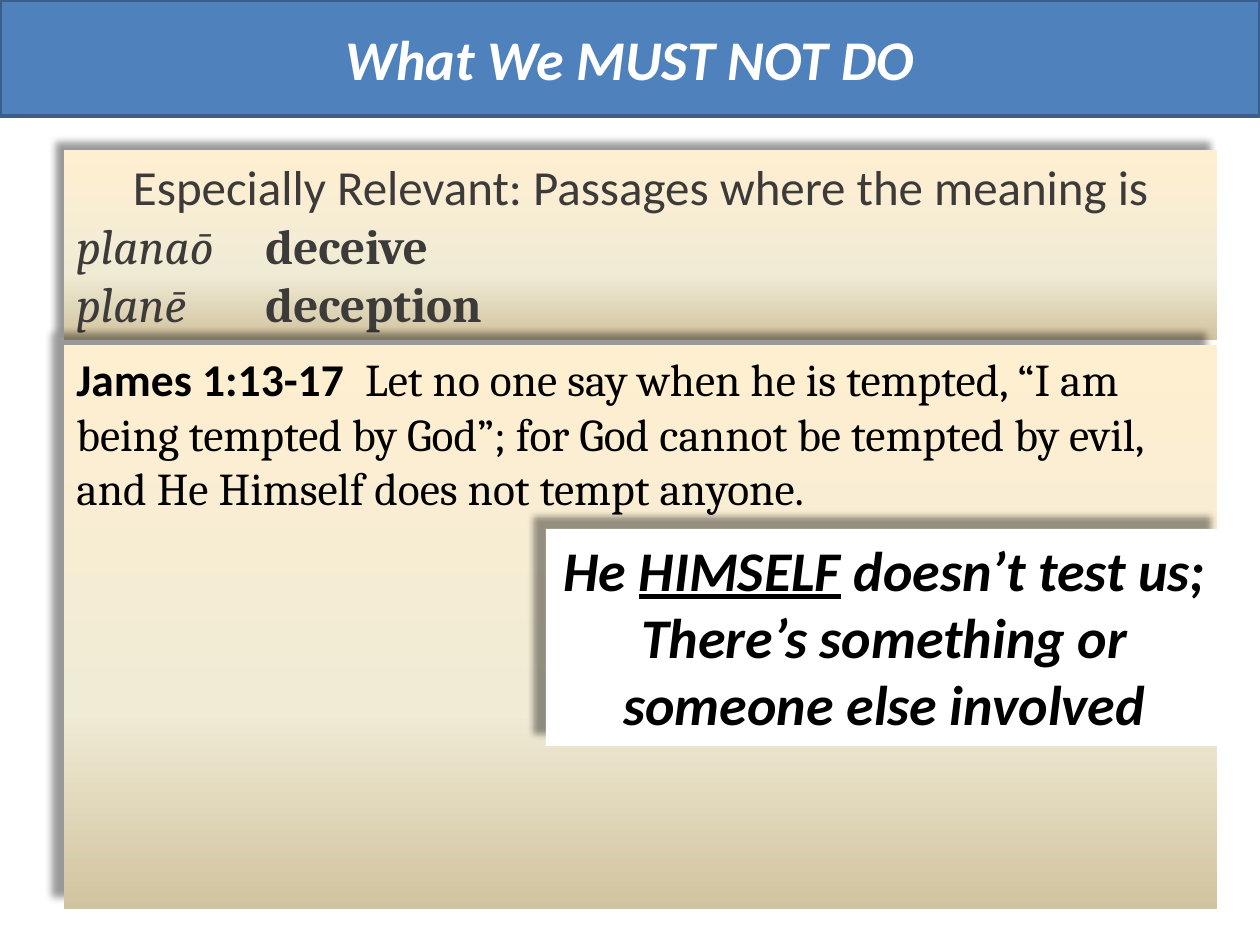
from dataclasses import dataclass

from lxml import etree
from pptx import Presentation
from pptx.dml.color import RGBColor
from pptx.enum.shapes import MSO_SHAPE
from pptx.enum.text import MSO_ANCHOR, PP_ALIGN
from pptx.oxml.ns import qn
from pptx.util import Emu, Pt

RECT = MSO_SHAPE.RECTANGLE
TOP, MIDDLE = MSO_ANCHOR.TOP, MSO_ANCHOR.MIDDLE
LEFT, CENTER = PP_ALIGN.LEFT, PP_ALIGN.CENTER
PX = 914400 // 126


@dataclass(frozen=True)
class Theme:
    """Colours, fonts and type sizes of the slide."""
    banner: str = "4F81BD"
    banner_line: str = "3A5F8C"
    white: str = "FFFFFF"
    black: str = "000000"
    gray: str = "3D3A3A"
    parchment: tuple = ((0, "FFEFD1"), (65, "F0EBD5"), (100, "D1C39F"))
    sans: str = "Calibri"
    serif: str = "Cambria"
    title: int = 32
    heading: int = 28
    verse: int = 26


class SlideBuilder:
    """Holds the theme and the current slide, and adds its elements."""

    def __init__(self, prs, theme):
        self.theme = theme
        self.s = prs.slides.add_slide(prs.slide_layouts[5])

    def place(self, sp, box):
        """Position a shape from a box in px."""
        sp.left, sp.top, sp.width, sp.height = (Emu(v * PX) for v in box)

    def add_text(self, sp, paragraphs, size, color, anchor=TOP):
        """Fill a shape with (alignment, runs) paragraphs."""
        tf = sp.text_frame
        tf.word_wrap = True
        tf.vertical_anchor = anchor
        for i, (align, runs) in enumerate(paragraphs):
            p = tf.add_paragraph() if i else tf.paragraphs[0]
            p.alignment = align
            for text, font, marks in runs:
                r = p.add_run()
                r.text = text
                r.font.name = font
                r.font.size = Pt(size)
                r.font.color.rgb = RGBColor.from_string(color)
                r.font.bold = "b" in marks
                r.font.italic = "i" in marks
                r.font.underline = "u" in marks

    def title(self, text, box):
        """Turn the title placeholder into a filled banner."""
        t = self.theme
        sp = self.s.shapes.title
        self.place(sp, box)
        sp.fill.solid()
        sp.fill.fore_color.rgb = RGBColor.from_string(t.banner)
        sp.line.color.rgb = RGBColor.from_string(t.banner_line)
        sp.line.width = Pt(2)
        self.add_text(sp, [(CENTER, [(text, t.sans, "bi")])], t.title, t.white, MIDDLE)

    def gradient(self, sp, stops):
        """Give a shape a vertical gradient."""
        sp.fill.gradient()
        sp.fill.gradient_angle = 270
        gs_list = sp._element.spPr.find(qn("a:gradFill")).find(qn("a:gsLst"))
        for gs in list(gs_list):
            gs_list.remove(gs)
        for position, color in stops:
            gs = etree.SubElement(gs_list, qn("a:gs"), pos=str(position * 1000))
            etree.SubElement(gs, qn("a:srgbClr"), val=color)

    def shadow(self, sp, distance):
        """Cast a soft shadow up and to the left."""
        sp.shadow.inherit = False
        effects = sp._element.spPr.find(qn("a:effectLst"))
        outer = etree.SubElement(
            effects, qn("a:outerShdw"), blurRad=str(Pt(4)), dist=str(Pt(distance)),
            dir=str(225 * 60000), algn="br", rotWithShape="0")
        color = etree.SubElement(outer, qn("a:srgbClr"), val=self.theme.black)
        etree.SubElement(color, qn("a:alpha"), val="40000")

    def panel(self, box, paragraphs, size, color, distance, stops=None):
        """Add a shadowed text panel, white unless gradient stops are given."""
        sp = self.s.shapes.add_shape(RECT, 0, 0, 0, 0)
        self.place(sp, box)
        if stops:
            self.gradient(sp, stops)
        else:
            sp.fill.solid()
            sp.fill.fore_color.rgb = RGBColor.from_string(self.theme.white)
        sp.line.fill.background()
        self.shadow(sp, distance)
        self.add_text(sp, paragraphs, size, color)


def main():
    """Build the slide and save it."""
    t = Theme()
    prs = Presentation()
    prs.slide_width, prs.slide_height = Emu(1260 * PX), Emu(945 * PX)
    b = SlideBuilder(prs, t)
    b.title("What We MUST NOT DO", (0, 0, 1260, 116))
    b.panel((64, 150, 1153, 190), [
        (CENTER, [("Especially Relevant: Passages where the meaning is", t.sans, "")]),
        (LEFT, [("planaō \t", t.serif, "i"), ("deceive", t.serif, "b")]),
        (LEFT, [("planē \t\t", t.serif, "i"), ("deception", t.serif, "b")]),
    ], t.heading, t.gray, 7, t.parchment)
    b.panel((64, 345, 1153, 564), [
        (LEFT, [
            ("James 1:13-17  ", t.sans, "b"),
            ("Let no one say when he is tempted, “I am being tempted by God”; "
             "for God cannot be tempted by evil, and He Himself does not tempt anyone.",
             t.serif, ""),
        ]),
    ], t.verse, t.black, 9, t.parchment)
    b.panel((546, 529, 677, 217), [
        (CENTER, [("He ", t.sans, "bi"), ("HIMSELF", t.sans, "biu"),
                  (" doesn’t test us;", t.sans, "bi")]),
        (CENTER, [("There’s something or someone else involved", t.sans, "bi")]),
    ], t.title, t.black, 10)
    prs.save("out.pptx")


if __name__ == "__main__":
    main()
